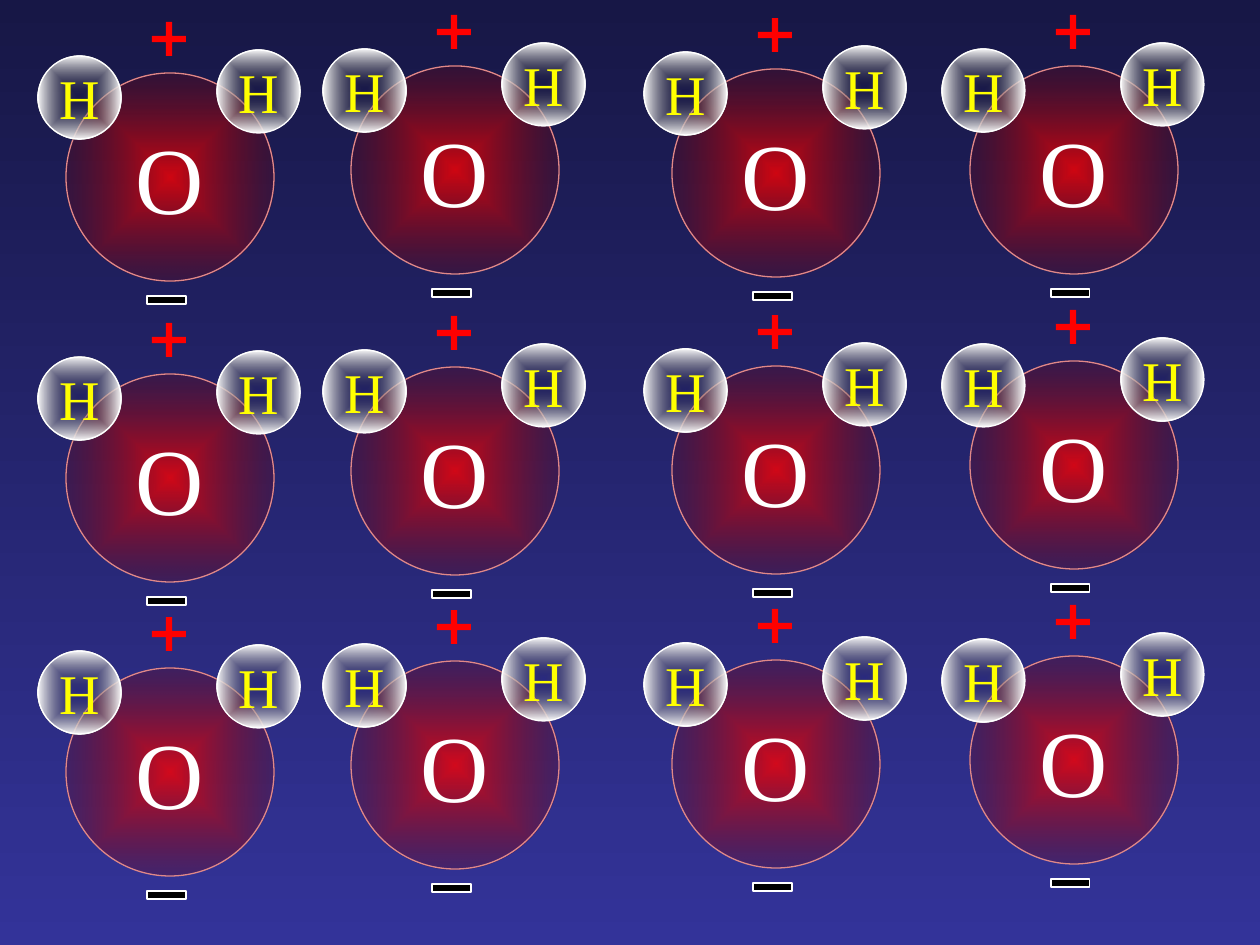
"""Build a slide showing twelve polar water molecules."""
import lxml.etree
import pptx
import pptx.dml.color
import pptx.enum.shapes
import pptx.enum.text
import pptx.oxml.ns
import pptx.util

PX = 914400 // 126
FONT = "Times New Roman"
SHAPES = pptx.enum.shapes.MSO_SHAPE
qn = pptx.oxml.ns.qn


def color(value):
    return pptx.dml.color.RGBColor.from_string(value)


def set_gradient(fill, stops):
    fill.gradient()
    for stop, (position, value) in zip(fill.gradient_stops, stops):
        stop.position = position
        stop.color.rgb = color(value)


presentation = pptx.Presentation()
presentation.slide_width = 1260 * PX
presentation.slide_height = 945 * PX
slide = presentation.slides.add_slide(presentation.slide_layouts[6])
background = slide.background.fill
set_gradient(background, [(0, "171746"), (1, "333399")])
background.gradient_angle = 270

OXYGEN_STOPS = [(0, "FF0000"), (1, "760000")]
HYDROGEN_STOPS = [(0, "222222"), (1, "FFFFFF")]
ATOMS = [
    ("O", 0, 0, 208, OXYGEN_STOPS, (79, 25), "E08888", 54, "FFFFFF"),
    ("H", 151, -23, 83, HYDROGEN_STOPS, (0, 100), "FFFFFF", 32, "FFFF00"),
    ("H", -28, -17, 83, HYDROGEN_STOPS, (0, 100), "FFFFFF", 32, "FFFF00"),
]
COLUMNS = [
    (66, (73, 374, 668)),
    (351, (66, 367, 661)),
    (672, (69, 366, 660)),
    (970, (66, 361, 656)),
]

for left, tops in COLUMNS:
    for top in tops:
        molecule = slide.shapes.add_group_shape()
        for symbol, dx, dy, size, stops, opacities, outline, points, text_color in ATOMS:
            atom = molecule.shapes.add_shape(
                SHAPES.OVAL, (left + dx) * PX, (top + dy) * PX, size * PX, size * PX
            )
            atom.shadow.inherit = False
            set_gradient(atom.fill, stops)
            gradient = atom.element.spPr.find(qn("a:gradFill"))
            for stop_color, opacity in zip(gradient.iter(qn("a:srgbClr")), opacities):
                alpha = lxml.etree.SubElement(stop_color, qn("a:alpha"))
                alpha.set("val", str(opacity * 1000))
            radial = lxml.etree.Element(qn("a:path"), {"path": "shape"})
            center = dict.fromkeys("ltrb", "50000")
            lxml.etree.SubElement(radial, qn("a:fillToRect"), center)
            gradient.replace(gradient.find(qn("a:lin")), radial)
            atom.line.color.rgb = color(outline)
            atom.line.width = pptx.util.Pt(0.75)
            text_frame = atom.text_frame
            text_frame.text = symbol
            text_frame.word_wrap = False
            text_frame.vertical_anchor = pptx.enum.text.MSO_ANCHOR.MIDDLE
            paragraph = text_frame.paragraphs[0]
            paragraph.alignment = pptx.enum.text.PP_ALIGN.CENTER
            font = paragraph.runs[0].font
            font.name = FONT
            font.size = pptx.util.Pt(points)
            font.color.rgb = color(text_color)

        plus = molecule.shapes.add_shape(
            SHAPES.CROSS, (left + 86) * PX, (top - 51) * PX, 34 * PX, 34 * PX
        )
        plus.adjustments[0] = 0.41
        plus.shadow.inherit = False
        plus.fill.solid()
        plus.fill.fore_color.rgb = color("FF0000")
        plus.line.fill.background()

        minus = molecule.shapes.add_shape(
            SHAPES.RECTANGLE, (left + 81) * PX, (top + 223) * PX, 39 * PX, 8 * PX
        )
        minus.shadow.inherit = False
        minus.fill.solid()
        minus.fill.fore_color.rgb = color("000000")
        minus.line.color.rgb = color("FFFFFF")
        minus.line.width = pptx.util.Pt(0.75)

presentation.save("out.pptx")
